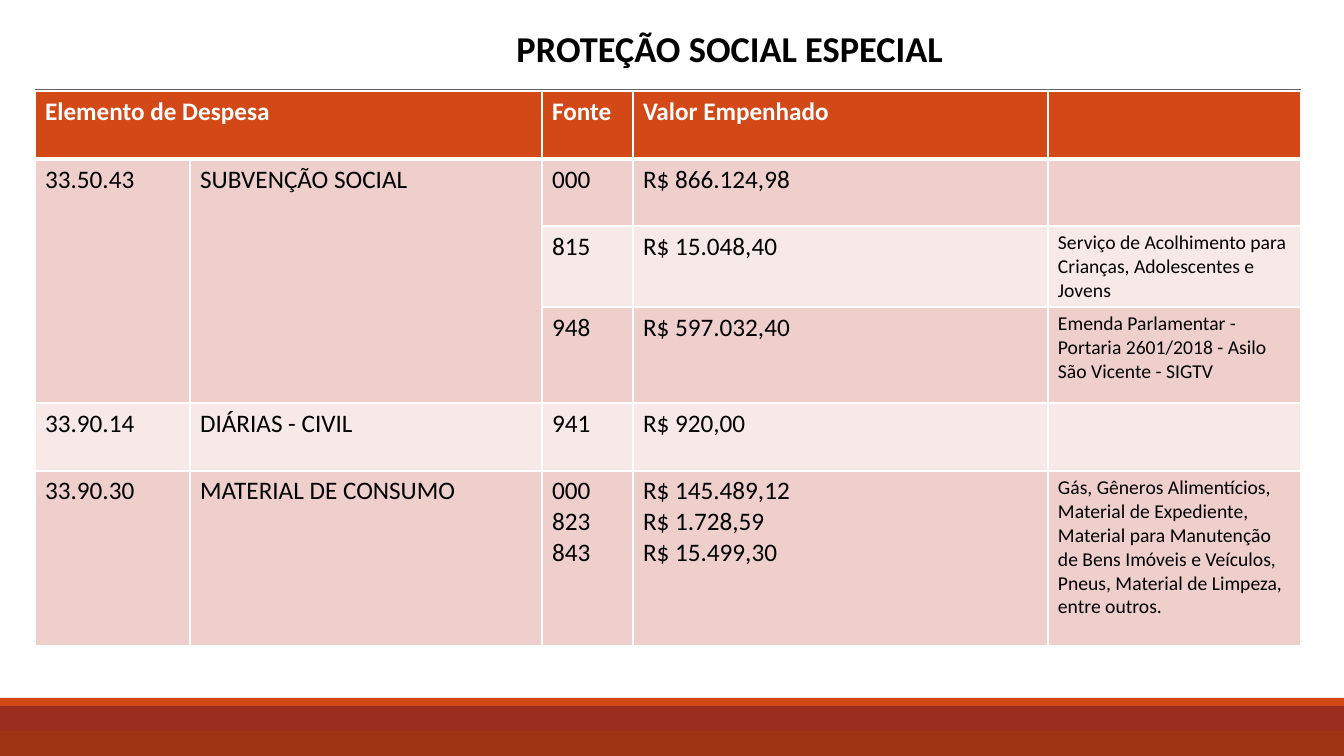
from lxml.etree import SubElement
from pptx import Presentation
from pptx.dml.color import RGBColor
from pptx.enum.shapes import MSO_CONNECTOR, MSO_SHAPE
from pptx.enum.text import MSO_AUTO_SIZE, PP_ALIGN
from pptx.oxml import parse_xml
from pptx.oxml.ns import nsdecls, qn
from pptx.util import Pt

PX = 914400 / 100.8
FONT = "Calibri"
COLORS = {
    "white": "FFFFFF", "black": "000000", "rule": "696464",
    "header": "D34817", "dark_row": "EFCFCC", "light_row": "F7E9E8",
    "footer": "9B2D1F", "footer_shade": "9E3611",
}
TITLE = "PROTEÇÃO SOCIAL ESPECIAL"
TITLE_BOX = (504, 21, 452, 54)
TABLE_LEFT, TABLE_TOP = 35, 91
COLUMN_WIDTHS = [155, 352, 91, 415, 253]
ROW_HEIGHTS = [68, 67, 81, 96, 68, 175]
ROWS = [
    ("Elemento de Despesa", "", "Fonte", "Valor Empenhado", ""),
    ("33.50.43", "SUBVENÇÃO SOCIAL", "000", "R$ 866.124,98", ""),
    ("", "", "815", "R$ 15.048,40",
     "Serviço de Acolhimento para Crianças, Adolescentes e Jovens"),
    ("", "", "948", "R$ 597.032,40",
     "Emenda Parlamentar - Portaria 2601/2018 - Asilo São Vicente - SIGTV"),
    ("33.90.14", "DIÁRIAS - CIVIL", "941", "R$ 920,00", ""),
    ("33.90.30", "MATERIAL DE CONSUMO", "000\n823\n843",
     "R$ 145.489,12\nR$ 1.728,59\nR$ 15.499,30",
     "Gás, Gêneros Alimentícios, Material de Expediente, Material para "
     "Manutenção de Bens Imóveis e Veículos, Pneus, Material de Limpeza, "
     "entre outros."),
]
MERGES = [((0, 0), (0, 1)), ((1, 0), (3, 0)), ((1, 1), (3, 1))]
NOTE_COLUMN = 4
# top, height, color, opacity in percent
FOOTER_BANDS = [
    (706, 50, "footer", 100),
    (698, 8, "header", 100),
    (731, 25, "footer_shade", 85),
]


def emu(*lengths):
    return [round(length * PX) for length in lengths]


def rgb(name):
    return RGBColor.from_string(COLORS[name])


def style_text(text_frame, size, color, bold, alignment=PP_ALIGN.LEFT):
    for paragraph in text_frame.paragraphs:
        paragraph.alignment = alignment
        font = paragraph.font
        font.name, font.size, font.bold = FONT, Pt(size), bold
        font.color.rgb = rgb(color)


def set_borders(cell, bottom_width):
    properties = cell._tc.get_or_add_tcPr()
    widths = {"lnL": 1, "lnR": 1, "lnT": 1, "lnB": bottom_width}
    for index, (side, width) in enumerate(widths.items()):
        properties.insert(index, parse_xml(
            f'<a:{side} {nsdecls("a")} w="{Pt(width)}"><a:solidFill>'
            f'<a:srgbClr val="{COLORS["white"]}"/></a:solidFill></a:{side}>'))


def add_footer(slide, slide_width):
    for top, height, color, opacity in FOOTER_BANDS:
        band = slide.shapes.add_shape(
            MSO_SHAPE.RECTANGLE, *emu(0, top), slide_width, *emu(height))
        band.shadow.inherit = False
        band.fill.solid()
        band.fill.fore_color.rgb = rgb(color)
        band.line.fill.background()
        if opacity < 100:
            fill_color = band._element.spPr.find(".//" + qn("a:srgbClr"))
            SubElement(fill_color, qn("a:alpha"), val=str(opacity * 1000))


def add_title(slide):
    title = slide.shapes.add_textbox(*emu(*TITLE_BOX))
    frame = title.text_frame
    frame.word_wrap = True
    frame.auto_size = MSO_AUTO_SIZE.SHAPE_TO_FIT_TEXT
    frame.text = TITLE
    style_text(frame, 26, "black", True, PP_ALIGN.CENTER)


def add_rule(slide):
    right = TABLE_LEFT + sum(COLUMN_WIDTHS)
    rule = slide.shapes.add_connector(
        MSO_CONNECTOR.STRAIGHT, *emu(TABLE_LEFT, TABLE_TOP, right, TABLE_TOP))
    rule.line.color.rgb = rgb("rule")
    rule.line.width = Pt(2.25)
    SubElement(rule._element.spPr, qn("a:effectLst"))


def add_expense_table(slide):
    table = slide.shapes.add_table(
        len(ROWS), len(COLUMN_WIDTHS),
        *emu(TABLE_LEFT, TABLE_TOP, sum(COLUMN_WIDTHS), sum(ROW_HEIGHTS))).table
    for column, width in zip(table.columns, emu(*COLUMN_WIDTHS)):
        column.width = width
    for row, height in zip(table.rows, emu(*ROW_HEIGHTS)):
        row.height = height
    for row_index, texts in enumerate(ROWS):
        is_header = row_index == 0
        band = "dark_row" if row_index % 2 else "light_row"
        for column_index, text in enumerate(texts):
            cell = table.cell(row_index, column_index)
            cell.text = text
            is_note = column_index == NOTE_COLUMN and text
            style_text(cell.text_frame, 14 if is_note else 18,
                       "white" if is_header else "black", is_header)
            cell.fill.solid()
            cell.fill.fore_color.rgb = rgb("header" if is_header else band)
            set_borders(cell, 3 if is_header else 1)
    for first, last in MERGES:
        table.cell(*first).merge(table.cell(*last))


def main():
    presentation = Presentation()
    presentation.slide_width, presentation.slide_height = emu(1344, 756)
    slide = presentation.slides.add_slide(presentation.slide_layouts[6])
    add_footer(slide, presentation.slide_width)
    add_rule(slide)
    add_title(slide)
    add_expense_table(slide)
    presentation.save("out.pptx")


if __name__ == "__main__":
    main()
